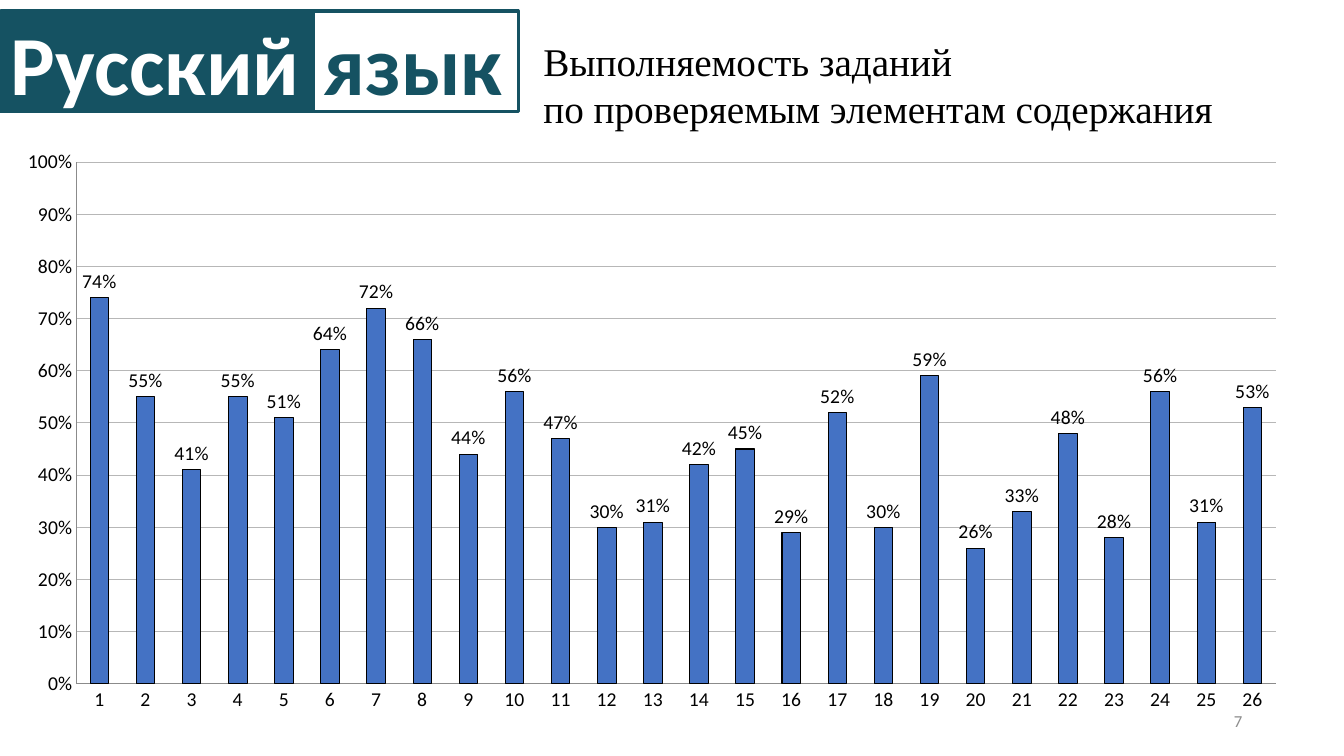
from lxml import etree
from pptx import Presentation
from pptx.chart.data import CategoryChartData
from pptx.dml.color import RGBColor
from pptx.enum.chart import XL_CHART_TYPE, XL_LABEL_POSITION, XL_TICK_MARK
from pptx.enum.shapes import MSO_SHAPE
from pptx.enum.text import MSO_ANCHOR, PP_ALIGN
from pptx.oxml.ns import qn
from pptx.util import Inches, Pt

TEAL, WHITE, BLACK, GRID, AXIS = "155262", "FFFFFF", "000000", "B7B7B7", "8B8B8B"
TAGS = [("Русский", 3.1, TEAL, WHITE), ("язык", 2.03, None, TEAL)]
TITLE = ["Выполняемость заданий", "по проверяемым элементам содержания"]
PAGE = "7"
PERCENTS = [74, 55, 41, 55, 51, 64, 72, 66, 44, 56, 47, 30, 31,
            42, 45, 29, 52, 30, 59, 26, 33, 48, 28, 56, 31, 53]
PLOT = {"x": 0.058, "y": 0.041, "w": 0.922, "h": 0.891}


def color(value):
    return RGBColor.from_string(value)


def set_font(font, name, size, value, bold=False):
    font.name, font.size, font.bold = name, Pt(size), bold
    font.color.rgb = color(value)


def set_line(line, value, width):
    line.color.rgb = color(value)
    line.width = Pt(width)


def write(tf, lines, name, size, value, bold=False, align=PP_ALIGN.LEFT):
    for i, text in enumerate(lines):
        p = tf.paragraphs[0] if i == 0 else tf.add_paragraph()
        p.text, p.alignment = text, align
        set_font(p.font, name, size, value, bold)


def add_text(s, box, lines, name, size, value, align=PP_ALIGN.LEFT):
    tf = s.shapes.add_textbox(*map(Inches, box)).text_frame
    tf.word_wrap = True
    write(tf, lines, name, size, value, align=align)
    return tf


def add_tags(s):
    left = 0.01
    for text, width, fill, ink in TAGS:
        sp = s.shapes.add_shape(MSO_SHAPE.RECTANGLE, *map(Inches, (left, 0.11, width, 1)))
        sp.shadow.inherit = False
        if fill:
            sp.fill.solid()
            sp.fill.fore_color.rgb = color(fill)
        else:
            sp.fill.background()
        set_line(sp.line, TEAL, 2.25)
        sp.text_frame.word_wrap = False
        sp.text_frame.vertical_anchor = MSO_ANCHOR.MIDDLE
        write(sp.text_frame, [text], "Calibri", 60, ink, True)
        left += width


def add_results(s):
    data = CategoryChartData(number_format="0%")
    data.categories = [str(i + 1) for i in range(len(PERCENTS))]
    data.add_series("Выполняемость", [v / 100 for v in PERCENTS])
    chart = s.shapes.add_chart(XL_CHART_TYPE.COLUMN_CLUSTERED,
                               *map(Inches, (0.01, 1.37, 12.9, 5.81)), data).chart
    chart.has_legend = chart.has_title = False
    set_font(chart.font, "Calibri", 14, BLACK)

    for axis in (chart.category_axis, chart.value_axis):
        axis.major_tick_mark = axis.minor_tick_mark = XL_TICK_MARK.NONE
        set_font(axis.tick_labels.font, "Calibri", 14, BLACK)
        set_line(axis.format.line, AXIS, 0.75)
    scale = chart.value_axis
    scale.minimum_scale, scale.maximum_scale, scale.major_unit = 0, 1, 0.1
    scale.tick_labels.number_format = "0%"
    scale.tick_labels.number_format_is_linked = False
    set_line(scale.major_gridlines.format.line, GRID, 0.75)

    plot = chart.plots[0]
    plot.gap_width, plot.vary_by_categories = 150, False
    bars = plot.series[0]
    bars.format.fill.solid()
    bars.format.fill.fore_color.rgb = color("4472C4")
    set_line(bars.format.line, BLACK, 0.75)
    labels = bars.data_labels
    labels.show_value = True
    labels.number_format, labels.number_format_is_linked = "0%", False
    labels.position = XL_LABEL_POSITION.OUTSIDE_END
    set_font(labels.font, "Calibri", 14, BLACK)

    area = chart._chartSpace.find(".//" + qn("c:plotArea"))
    for old in area.findall(qn("c:layout")):
        area.remove(old)
    layout = etree.Element(qn("c:layout"))
    area.insert(0, layout)
    manual = etree.SubElement(layout, qn("c:manualLayout"))
    modes = {"layoutTarget": "inner", "xMode": "edge", "yMode": "edge"}
    for tag, value in {**modes, **PLOT}.items():
        etree.SubElement(manual, qn("c:" + tag)).set("val", str(value))


def main():
    prs = Presentation()
    prs.slide_width, prs.slide_height = Inches(13.33), Inches(7.5)
    s = prs.slides.add_slide(prs.slide_layouts[6])
    add_tags(s)
    add_text(s, (5.29, 0.32, 7.55, 1.04), TITLE, "Times New Roman", 28, BLACK)
    page = add_text(s, (9.42, 6.95, 3, 0.4), [PAGE], "Calibri", 12, "8C8C8C", PP_ALIGN.RIGHT)
    page.vertical_anchor = MSO_ANCHOR.MIDDLE
    add_results(s)
    prs.save("out.pptx")


if __name__ == "__main__":
    main()
